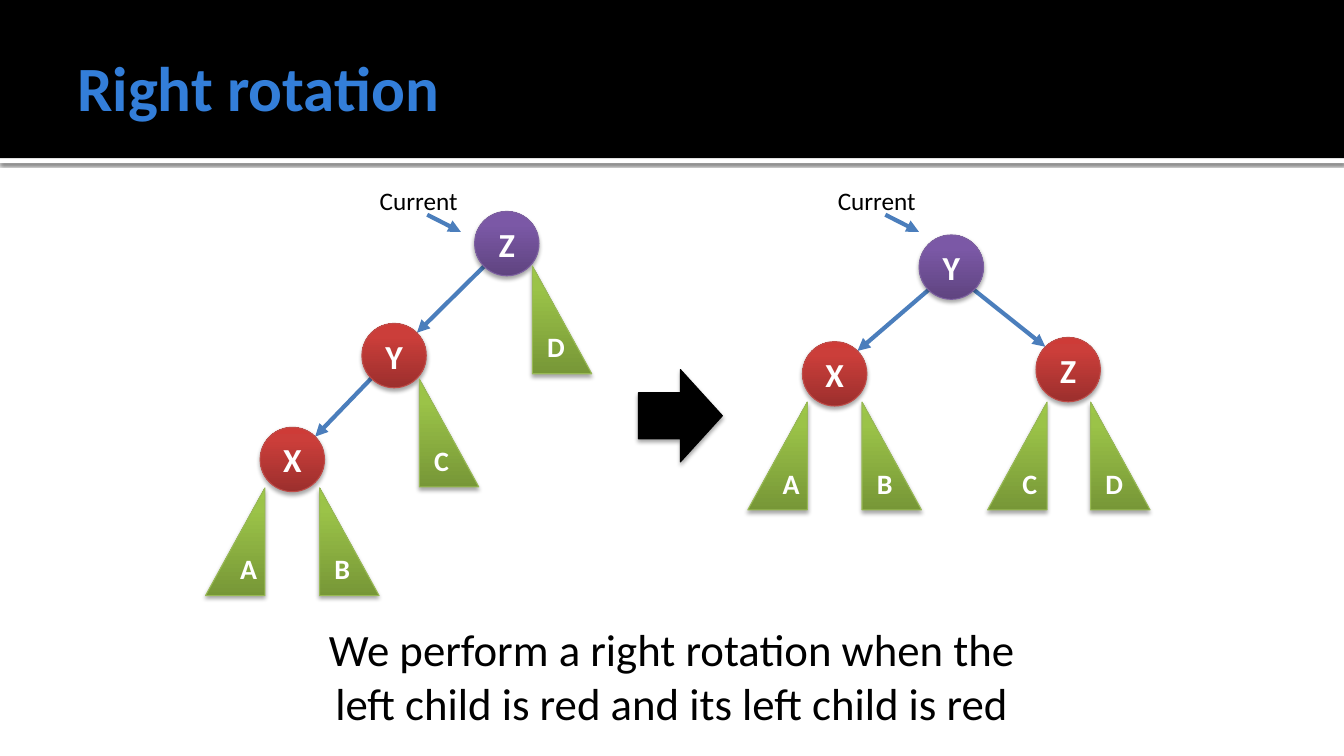
from copy import deepcopy
from dataclasses import dataclass
from lxml.etree import SubElement
from pptx import Presentation
from pptx.dml.color import RGBColor
from pptx.enum.shapes import MSO_CONNECTOR, MSO_SHAPE
from pptx.enum.text import MSO_ANCHOR, PP_ALIGN
from pptx.oxml.ns import qn
from pptx.util import Pt

COLORS = {"black": "000000", "white": "FFFFFF", "title": "337ED9", "edge": "4B7EBC"}
# Gradient from bottom to top, then outline
HUES = {
    "purple": ("5F4480", "7B58A6", "7C57A8", "7D60A0"),
    "red": ("9C2F2D", "CB3E3A", "CE3B37", "BF4C48"),
    "green": ("779737", "9BC348", "9DC746", "98B955"),
}
STOPS = (0, 0.8, 1)
FONTS = {
    "title": {"name": "Calibri", "size": Pt(45), "bold": True},
    "body": {"name": "Calibri", "size": Pt(32)},
    "label": {"name": "Calibri", "size": Pt(18)},
    "node": {"name": "Calibri", "size": Pt(24), "bold": True},
    "leaf": {"name": "Calibri", "size": Pt(20), "bold": True},
}
NODE = 46
LEAF = (42.5, 77)
DIAG = NODE / 2 * 0.71  # offset of a point at 45 degrees on a node


@dataclass
class Node:
    name: str
    x: float
    y: float
    hue: str = "red"
    root: str = ""


@dataclass
class Leaf:
    name: str
    x: float
    y: float
    flip: bool = False


@dataclass
class Tree:
    tag: float
    nodes: list[Node]
    leaves: list[Leaf]


TREES = [
    Tree(264.2,
         [Node("Z", 339, 151, "purple"), Node("Y", 258.5, 231, root="Z"),
          Node("X", 185.8, 305.2, root="Y")],
         [Leaf("B", 228.3, 348.5), Leaf("A", 146.8, 348.5, True),
          Leaf("D", 380.2, 190), Leaf("C", 299.5, 270.8)]),
    Tree(591.4,
         [Node("Y", 656.5, 167.8, "purple"), Node("Z", 740, 241, root="Y"),
          Node("X", 573.2, 244, root="Y")],
         [Leaf("B", 615.7, 287.2), Leaf("A", 534.2, 287.2, True),
          Leaf("D", 779, 287.2), Leaf("C", 705.5, 287.2, True)]),
]


def rgb(code: str) -> RGBColor:
    return RGBColor.from_string(code)


def style(item, values: dict) -> None:
    for key, value in values.items():
        setattr(item, key, value)


def write(shape, text: str, font: str, color: str, align=PP_ALIGN.CENTER) -> None:
    para = shape.text_frame.paragraphs[0]
    para.alignment = align
    run = para.add_run()
    run.text = text
    style(run.font, FONTS[font])
    run.font.color.rgb = rgb(COLORS[color])


def shade(shape, alpha: int = 35, blur: float = 3.1, dist: float = 1.8) -> None:
    shape.shadow.inherit = False
    effects = shape.element.spPr.find(qn("a:effectLst"))
    outer = SubElement(effects, qn("a:outerShdw"), blurRad=str(Pt(blur)),
                       dist=str(Pt(dist)), dir="5400000", rotWithShape="0")
    black = SubElement(outer, qn("a:srgbClr"), val=COLORS["black"])
    SubElement(black, qn("a:alpha"), val=str(alpha * 1000))


def block(shapes, kind, box: tuple, color: str):
    shape = shapes.add_shape(kind, *map(Pt, box))
    shape.shadow.inherit = False
    shape.fill.solid()
    shape.fill.fore_color.rgb = rgb(COLORS[color])
    shape.line.fill.background()
    return shape


def glossy(shapes, kind, box: tuple, hue: str):
    shape = shapes.add_shape(kind, *map(Pt, box))
    *tones, rim = HUES[hue]
    shape.fill.gradient()
    shape.fill.gradient_angle = 90
    stops = shape.element.spPr.find(".//" + qn("a:gsLst"))
    stops.append(deepcopy(stops[-1]))
    for stop, place, tone in zip(shape.fill.gradient_stops, STOPS, tones):
        stop.position = place
        stop.color.rgb = rgb(tone)
    shape.line.color.rgb = rgb(rim)
    shape.line.width = Pt(0.75)
    shade(shape)
    shape.text_frame.vertical_anchor = MSO_ANCHOR.MIDDLE
    return shape


def arrow(shapes, start: tuple, end: tuple) -> None:
    line = shapes.add_connector(MSO_CONNECTOR.STRAIGHT, *map(Pt, start + end))
    line.line.color.rgb = rgb(COLORS["edge"])
    line.line.width = Pt(3)
    props = line.element.spPr
    SubElement(props.find(qn("a:ln")), qn("a:tailEnd"), type="triangle")
    SubElement(props, qn("a:effectLst"))


def note(shapes, box: tuple, text: str, font: str, align) -> None:
    area = shapes.add_textbox(*map(Pt, box))
    area.text_frame.word_wrap = True
    write(area, text, font, "black", align)


def edge(shapes, top: Node, low: Node) -> None:
    side = DIAG if low.x > top.x else -DIAG
    half = NODE / 2
    arrow(shapes, (top.x + half + side, top.y + half + DIAG),
          (low.x + half - side, low.y + half - DIAG))


def draw(shapes, tree: Tree) -> None:
    # Edges
    names = {node.name: node for node in tree.nodes}
    for node in tree.nodes:
        if node.root:
            edge(shapes, names[node.root], node)
    # Nodes
    for node in tree.nodes:
        ball = glossy(shapes, MSO_SHAPE.OVAL, (node.x, node.y, NODE, NODE), node.hue)
        write(ball, node.name, "node", "white")
    # Subtrees
    for leaf in tree.leaves:
        wedge = glossy(shapes, MSO_SHAPE.RIGHT_TRIANGLE, (leaf.x, leaf.y, *LEAF), "green")
        if leaf.flip:
            wedge.element.spPr.find(qn("a:xfrm")).set("flipH", "1")
        write(wedge, leaf.name, "leaf", "white")
    # Pointer to the current node
    note(shapes, (tree.tag, 129, 174, 29), "Current", "label", PP_ALIGN.LEFT)
    arrow(shapes, (tree.tag + 41, 153.4), (tree.tag + 65, 165.6))


def main() -> None:
    deck = Presentation()
    style(deck, {"slide_width": Pt(960), "slide_height": Pt(540)})
    slide = deck.slides.add_slide(deck.slide_layouts[5])
    shapes = slide.shapes

    # Header bands
    strip = block(shapes, MSO_SHAPE.RECTANGLE, (0, 113, 960, 3.6), "white")
    shade(strip, 60, 2.5, 0.8)
    block(shapes, MSO_SHAPE.RECTANGLE, (0, 0, 960, 113), "black")

    # Title, in front of the bands
    title = shapes.title
    shapes.element.append(title.element)
    style(title, {"left": Pt(48), "top": Pt(12.2), "width": Pt(864), "height": Pt(98.6)})
    style(title.text_frame, {
        "vertical_anchor": MSO_ANCHOR.MIDDLE, "margin_left": Pt(7.2),
        "margin_right": Pt(3.6), "margin_top": Pt(3.6), "margin_bottom": Pt(3.6)})
    write(title, "Right rotation", "title", "title", PP_ALIGN.LEFT)

    # Step arrow and rule
    step = block(shapes, MSO_SHAPE.RIGHT_ARROW, (456, 264, 60, 66), "black")
    step.line.color.rgb = rgb(COLORS["black"])
    step.line.width = Pt(0.75)
    shade(step)
    note(shapes, (224, 440.6, 512, 85),
         "We perform a right rotation when the left child is red and its left child is red",
         "body", PP_ALIGN.CENTER)

    # Trees before and after
    for tree in TREES:
        draw(shapes.add_group_shape().shapes, tree)

    deck.save("out.pptx")


if __name__ == "__main__":
    main()
